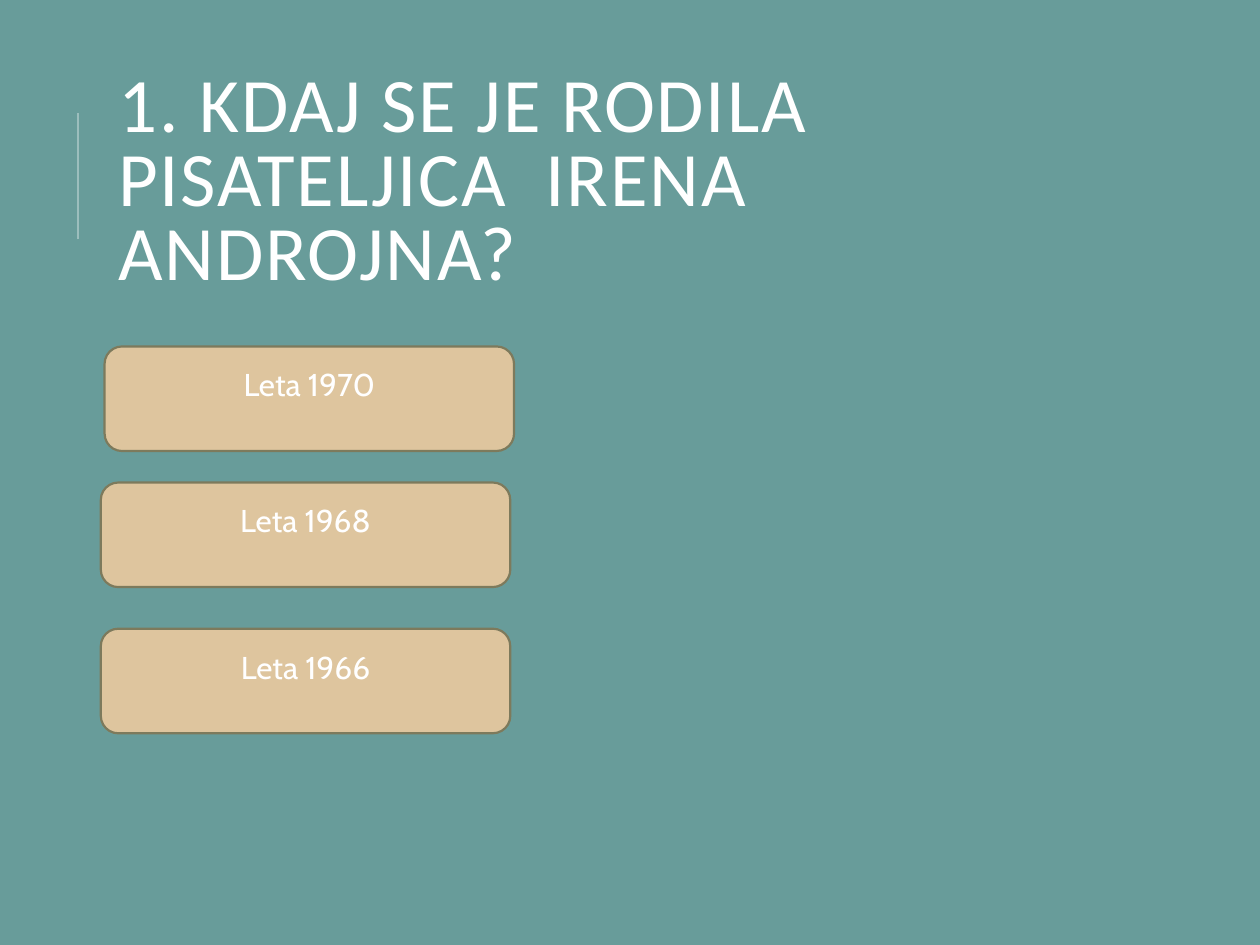
from lxml import etree
from pptx import Presentation
from pptx.dml.color import RGBColor
from pptx.enum.shapes import MSO_CONNECTOR, MSO_SHAPE
from pptx.enum.text import MSO_ANCHOR, MSO_AUTO_SIZE, PP_ALIGN
from pptx.oxml.ns import qn
from pptx.util import Inches, Pt

BACKGROUND, WHITE = "689C9A", "FFFFFF"
RULE, BUTTON, BUTTON_LINE = "9CBEBD", "DEC59E", "7D7A5C"

QUESTION = "1. KDAJ SE JE RODILA PISATELJICA  IRENA ANDROJNA?"
ANSWERS = [  # text, left, top
    ("Leta 1970", 0.83, 2.75),
    ("Leta 1968", 0.8, 3.83),
    ("Leta 1966", 0.8, 4.99),
]
ANSWER_SIZE = (3.25, 0.83)


def color(value):
    return RGBColor.from_string(value)


def add_run(p, text, font, size):
    r = p.add_run()
    r.text = text
    r.font.name = font
    r.font.size = Pt(size)
    r.font.color.rgb = color(WHITE)
    return r


def add_rule(s):
    line = s.shapes.add_connector(MSO_CONNECTOR.STRAIGHT, Inches(0.62), Inches(1.9),
                                  Inches(0.62), Inches(0.9))
    line.line.color.rgb = color(RULE)
    line.line.width = Pt(1.5)
    etree.SubElement(line._element.spPr, qn("a:effectLst"))


def add_question(s):
    title = s.shapes.title
    title.left, title.top = Inches(0.84), Inches(0.64)
    title.width, title.height = Inches(7.97), Inches(1.64)
    tf = title.text_frame
    tf.word_wrap = True
    tf.auto_size = MSO_AUTO_SIZE.NONE
    tf.vertical_anchor = MSO_ANCHOR.MIDDLE
    p = tf.paragraphs[0]
    p.alignment = PP_ALIGN.LEFT
    p.line_spacing = 0.8
    r = add_run(p, QUESTION, "Calibri", 44)
    r.font._element.set("spc", "100")


def add_answer(s, text, left, top):
    sp = s.shapes.add_shape(MSO_SHAPE.ROUNDED_RECTANGLE, Inches(left), Inches(top),
                            *map(Inches, ANSWER_SIZE))
    sp.shadow.inherit = False
    sp.fill.solid()
    sp.fill.fore_color.rgb = color(BUTTON)
    sp.line.color.rgb = color(BUTTON_LINE)
    sp.line.width = Pt(1.25)
    tf = sp.text_frame
    tf.word_wrap = True
    tf.vertical_anchor = MSO_ANCHOR.TOP
    tf.margin_top = Inches(0.11)
    p = tf.paragraphs[0]
    p.alignment = PP_ALIGN.CENTER
    add_run(p, text, "Cabin", 18)


def main():
    prs = Presentation()
    prs.slide_width, prs.slide_height = Inches(10), Inches(7.5)
    s = prs.slides.add_slide(prs.slide_layouts[5])
    s.background.fill.solid()
    s.background.fill.fore_color.rgb = color(BACKGROUND)
    add_rule(s)
    add_question(s)
    for answer in ANSWERS:
        add_answer(s, *answer)
    prs.save("out.pptx")


if __name__ == "__main__":
    main()
